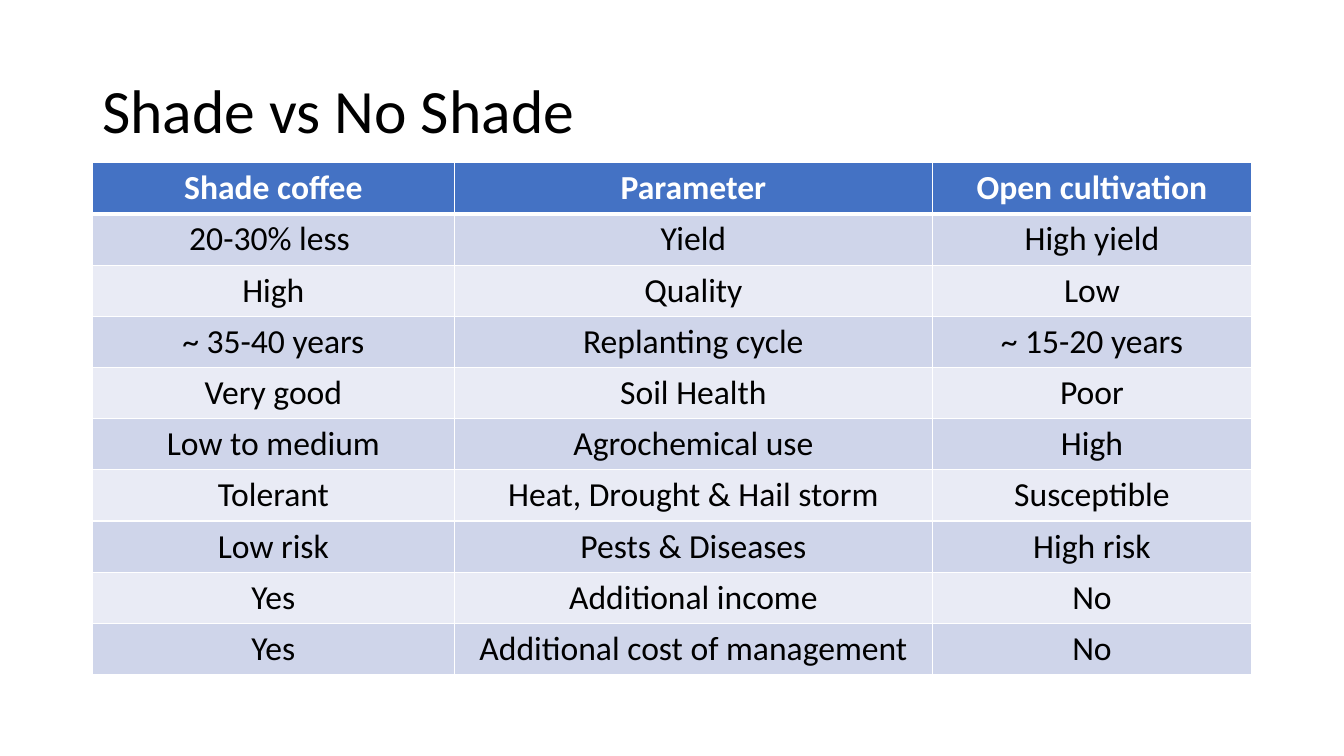
from lxml.etree import SubElement
from pptx import Presentation
from pptx.dml.color import RGBColor
from pptx.enum.text import MSO_ANCHOR, PP_ALIGN
from pptx.oxml.ns import qn
from pptx.util import Cm, Pt

BLACK = RGBColor(0x00, 0x00, 0x00)
WHITE = RGBColor(0xFF, 0xFF, 0xFF)
BLUE = RGBColor(0x44, 0x72, 0xC4)
BANDS = [RGBColor(0xE9, 0xEB, 0xF5), RGBColor(0xCF, 0xD5, 0xEA)]

ROWS = [
    ("Shade coffee", "Parameter", "Open cultivation"),
    ("20-30% less ", "Yield", "High yield"),
    ("High", "Quality", "Low"),
    ("~ 35-40 years", "Replanting cycle", "~ 15-20 years"),
    ("Very good", "Soil Health", "Poor"),
    ("Low to medium", "Agrochemical use", "High"),
    ("Tolerant", "Heat, Drought & Hail storm", "Susceptible"),
    ("Low risk", "Pests & Diseases", "High risk"),
    ("Yes", "Additional income", "No"),
    ("Yes", "Additional cost of management", "No"),
]
WIDTHS = [9.12, 12.05, 8.04]
HEIGHT = 1.29


def write(frame, text, size=24, color=BLACK, bold=False,
          align=PP_ALIGN.CENTER, space=1.0):
    para = frame.paragraphs[0]
    para.alignment = align
    para.line_spacing = space
    run = para.add_run()
    run.text = text
    font = run.font
    font.name = "Calibri"
    font.size = Pt(size)
    font.bold = bold
    font.color.rgb = color


def edge(cell, side, width):
    """Draw a white border on one side of a cell; call in order L, R, T, B."""
    line = SubElement(cell._tc.get_or_add_tcPr(), qn(f"a:ln{side}"),
                      w=str(Pt(width)))
    fill = SubElement(line, qn("a:solidFill"))
    SubElement(fill, qn("a:srgbClr"), val=str(WHITE))


deck = Presentation()
deck.slide_width = Cm(33.87)
deck.slide_height = Cm(19.05)
slide = deck.slides.add_slide(deck.slide_layouts[6])

title = slide.shapes.add_textbox(Cm(2.33), Cm(1.01), Cm(29.21), Cm(3.68))
frame = title.text_frame
frame.word_wrap = True
frame.vertical_anchor = MSO_ANCHOR.MIDDLE
write(frame, "Shade vs No Shade", size=44, align=PP_ALIGN.LEFT, space=0.9)

table = slide.shapes.add_table(
    len(ROWS), len(WIDTHS), Cm(2.33), Cm(4.1),
    Cm(sum(WIDTHS)), Cm(HEIGHT * len(ROWS))).table
for col, width in zip(table.columns, WIDTHS):
    col.width = Cm(width)

for r, row in enumerate(ROWS):
    table.rows[r].height = Cm(HEIGHT)
    head = r == 0
    for c, text in enumerate(row):
        cell = table.cell(r, c)
        edge(cell, "L", 1)
        edge(cell, "R", 1)
        edge(cell, "T", 3 if r == 1 else 1)
        edge(cell, "B", 3 if head else 1)
        cell.fill.solid()
        cell.fill.fore_color.rgb = BLUE if head else BANDS[r % 2]
        write(cell.text_frame, text, color=WHITE if head else BLACK, bold=head)

deck.save("out.pptx")
